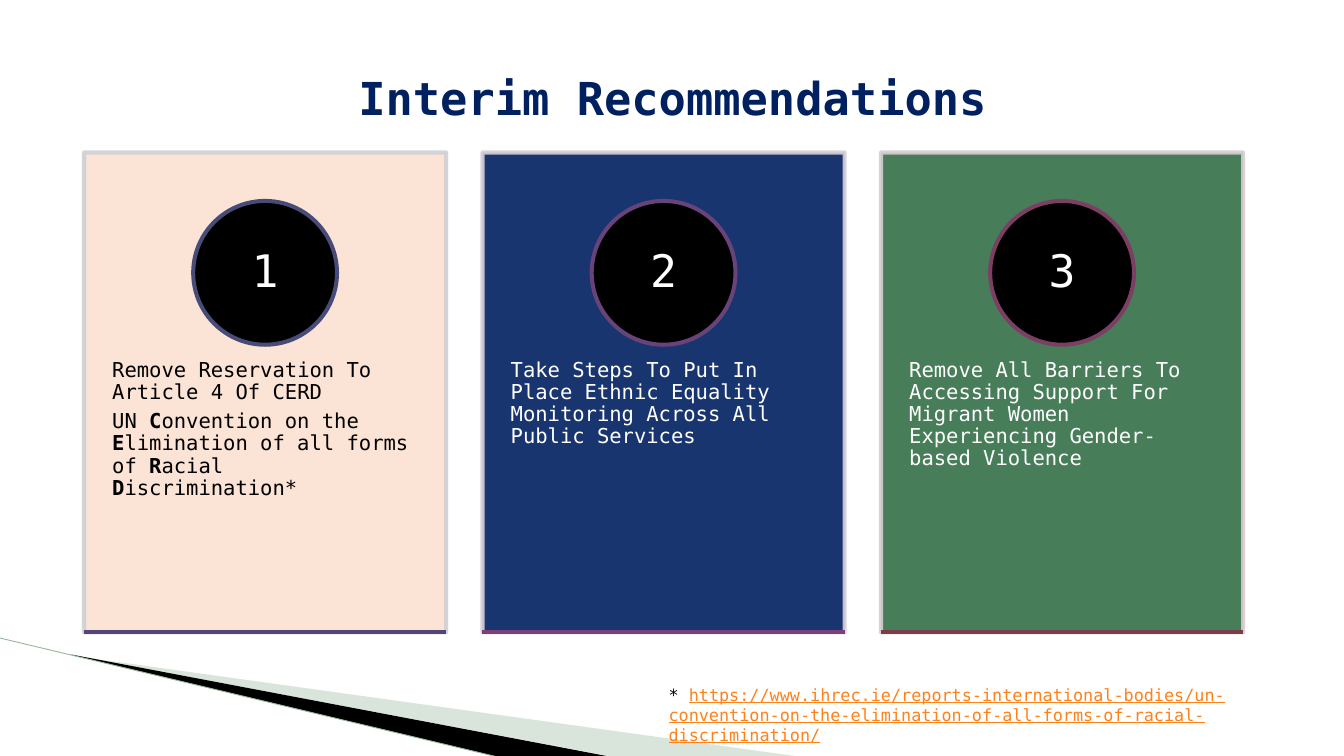
from lxml import etree
from pptx import Presentation
from pptx.dml.color import RGBColor
from pptx.enum.shapes import MSO_CONNECTOR, MSO_SHAPE
from pptx.enum.text import MSO_ANCHOR, MSO_AUTO_SIZE, PP_ALIGN
from pptx.oxml.ns import qn
from pptx.util import Inches, Pt

RECTANGLE, OVAL = MSO_SHAPE.RECTANGLE, MSO_SHAPE.OVAL
STRAIGHT = MSO_CONNECTOR.STRAIGHT
TOP, MIDDLE = MSO_ANCHOR.TOP, MSO_ANCHOR.MIDDLE
LEFT, CENTER = PP_ALIGN.LEFT, PP_ALIGN.CENTER
GROW = MSO_AUTO_SIZE.SHAPE_TO_FIT_TEXT

FONT = "DejaVu Sans Mono"
BLACK = RGBColor(0x00, 0x00, 0x00)
WHITE = RGBColor(0xFF, 0xFF, 0xFF)
NAVY = RGBColor(0x00, 0x20, 0x60)
PEACH = RGBColor(0xFB, 0xE0, 0xD1)
GREEN = RGBColor(0x33, 0x6F, 0x47)
SAGE = RGBColor(0xA0, 0xBD, 0xA5)
SAGE_LINE = RGBColor(0x96, 0xB6, 0x9B)
ORANGE = RGBColor(0xFF, 0x81, 0x19)

# Content: a paragraph is a list of (text, format) runs
TITLE = "Interim Recommendations"
BOLD = {"bold": True}
CARDS = [
    {"paragraphs": [
        [("Remove Reservation To Article 4 Of CERD", {})],
        [("UN ", {}), ("C", BOLD), ("onvention on the ", {}),
         ("E", BOLD), ("limination of all forms of ", {}),
         ("R", BOLD), ("acial ", {}), ("D", BOLD), ("iscrimination*", {})]],
     "fill": PEACH, "text": BLACK, "border": RGBColor(0xCF, 0xD0, 0xD6),
     "ring": RGBColor(0x47, 0x4B, 0x78), "base": RGBColor(0x54, 0x45, 0x79)},
    {"paragraphs": [
        [("Take Steps To Put In Place Ethnic Equality Monitoring Across All "
          "Public Services", {})]],
     "fill": NAVY, "text": WHITE, "border": RGBColor(0xD6, 0xCF, 0xD7),
     "ring": RGBColor(0x67, 0x43, 0x7A), "base": RGBColor(0x7B, 0x40, 0x79)},
    {"paragraphs": [
        [("Remove All Barriers To Accessing Support For Migrant Women "
          "Experiencing Gender-based Violence", {})]],
     "fill": GREEN, "text": WHITE, "border": RGBColor(0xD7, 0xCE, 0xD0),
     "ring": RGBColor(0x7C, 0x3E, 0x63), "base": RGBColor(0x7D, 0x3C, 0x4A)},
]
FOOTNOTE = [[
    ("* ", {}),
    ("https://www.ihrec.ie/reports-international-bodies/un-convention-on-the-"
     "elimination-of-all-forms-of-racial-discrimination/",
     {"color": ORANGE, "underline": True}),
]]
# Swoosh in the bottom left corner: points, colour, opacity in percent
WEDGES = [
    ([(1.09, 9.76), (11.9, 11.26), (9.12, 11.26), (1.09, 9.75)], SAGE, 40),
    ([(1.06, 9.74), (9.13, 11.27), (7.44, 11.27), (1.08, 9.75)], BLACK, 100),
]

# Card grid, in inches
CARD_LEFT, CARD_TOP, CARD_W, CARD_H = 1.25, 2.27, 5.39, 7.14
CARD_STEP = 5.93
CIRCLE, CIRCLE_TOP = 2.14, 2.99
BODY_TOP, BODY_H = 4.99, 4.28
LINE_WIDTH = 4.33


def write(shape, paragraphs, *, size, color, bold=False, align=LEFT,
          anchor=TOP, insets=(0.1, 0.05, 0.1, 0.05), spacing=None, after=None):
    frame = shape.text_frame
    frame.word_wrap = True
    frame.vertical_anchor = anchor
    (frame.margin_left, frame.margin_top,
     frame.margin_right, frame.margin_bottom) = map(Inches, insets)
    for index, runs in enumerate(paragraphs):
        paragraph = frame.add_paragraph() if index else frame.paragraphs[0]
        paragraph.alignment = align
        if spacing:
            paragraph.line_spacing = spacing
        if after:
            paragraph.space_after = Pt(after)
        for text, extra in runs:
            run = paragraph.add_run()
            run.text = text
            run.font.name = FONT
            run.font.size = Pt(size)
            run.font.bold = extra.get("bold", bold)
            run.font.underline = extra.get("underline")
            run.font.color.rgb = extra.get("color", color)


def paint(shape, fill, border=None, opacity=100):
    shape.shadow.inherit = False
    shape.fill.solid()
    shape.fill.fore_color.rgb = fill
    if border is None:
        shape.line.fill.background()
    else:
        shape.line.color.rgb = border
        shape.line.width = Pt(LINE_WIDTH)
    if opacity < 100:
        for color in shape.element.spPr.iter(qn("a:srgbClr")):
            etree.SubElement(color, qn("a:alpha")).set("val", str(opacity * 1000))


def add_line(slide, start, end, color, width):
    line = slide.shapes.add_connector(STRAIGHT, *map(Inches, start + end))
    line.line.color.rgb = color
    line.line.width = Pt(width)
    etree.SubElement(line.element.spPr, qn("a:effectLst"))


def add_swoosh(slide):
    for points, color, opacity in WEDGES:
        start, *others = [(Inches(x), Inches(y)) for x, y in points]
        builder = slide.shapes.build_freeform(*start)
        builder.add_line_segments(others, close=True)
        paint(builder.convert_to_shape(), color, opacity=opacity)
    add_line(slide, (-0.02, 9.49), (7.43, 11.27), SAGE_LINE, 0.95)


def add_card(slide, index, card):
    left = CARD_LEFT + index * CARD_STEP
    panel = slide.shapes.add_shape(
        RECTANGLE, *map(Inches, (left, CARD_TOP, CARD_W, CARD_H)))
    paint(panel, card["fill"], card["border"], opacity=90)

    body = slide.shapes.add_textbox(
        *map(Inches, (left, BODY_TOP, CARD_W, BODY_H)))
    write(body, card["paragraphs"], size=22, color=card["text"],
          insets=(0.42, 0.36, 0.42, 0.36), spacing=0.9, after=7.7)

    circle_left = left + (CARD_W - CIRCLE) / 2
    circle = slide.shapes.add_shape(
        OVAL, *map(Inches, (circle_left, CIRCLE_TOP, CIRCLE, CIRCLE)))
    paint(circle, BLACK, card["ring"])
    write(circle, [[(str(index + 1), {})]], size=48, color=WHITE, align=CENTER,
          anchor=MIDDLE, insets=(0.17, 0.01, 0.17, 0.01), spacing=0.9)

    bottom = CARD_TOP + CARD_H
    add_line(slide, (left, bottom), (left + CARD_W, bottom),
             card["base"], LINE_WIDTH)


def main():
    deck = Presentation()
    deck.slide_width, deck.slide_height = Inches(20), Inches(11.25)
    slide = deck.slides.add_slide(deck.slide_layouts[5])

    # Title, lifted clear of the cards by its bottom inset
    title = slide.shapes.title
    title.left, title.top, title.width, title.height = map(
        Inches, (1.38, 0.91, 17.25, 1.86))
    write(title, [[(TITLE, {})]], size=48.6, color=NAVY, bold=True,
          align=CENTER, anchor=MIDDLE, insets=(0.18, 0.09, 0.18, 0.88))

    add_swoosh(slide)
    for index, card in enumerate(CARDS):
        add_card(slide, index, card)

    # Footnote with the source address
    footnote = slide.shapes.add_textbox(*map(Inches, (9.85, 10.14, 9.95, 0.71)))
    write(footnote, FOOTNOTE, size=18, color=BLACK)
    footnote.text_frame.auto_size = GROW

    deck.save("out.pptx")


if __name__ == "__main__":
    main()
